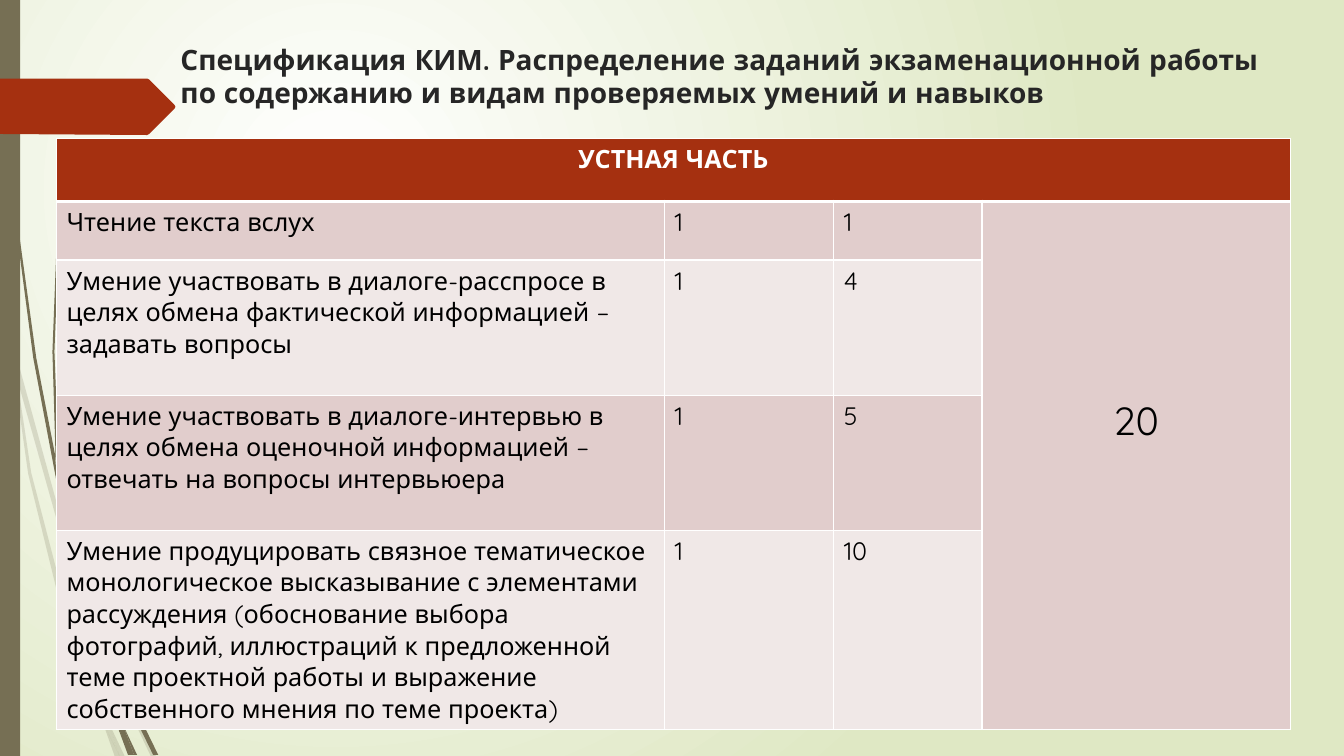
from lxml import etree
from pptx import Presentation
from pptx.dml.color import RGBColor
from pptx.enum import shapes, text
from pptx.oxml import parse_xml
from pptx.oxml.ns import qn
from pptx.util import Inches, Pt

FONT = "Quicksand"
COLORS = {
    "olive": "766F54", "rust": "A53010", "rose": "E1CDCC", "pale": "F0E8E7",
    "white": "FFFFFF", "black": "000000", "ink": "262626", "green": "DFE8C4",
}
TITLE = ("Спецификация КИМ. Распределение заданий экзаменационной работы "
         "по содержанию и видам проверяемых умений и навыков")
HEAD = "УСТНАЯ ЧАСТЬ"
TOTAL = "20"
ROWS = [
    ("Чтение текста вслух", "1", "1"),
    ("Умение участвовать в диалоге-расспросе в целях обмена фактической "
     "информацией – задавать вопросы", "1", "4"),
    ("Умение участвовать в диалоге-интервью в целях обмена оценочной "
     "информацией – отвечать на вопросы интервьюера", "1", "5"),
    ("Умение продуцировать связное тематическое монологическое высказывание "
     "с элементами рассуждения (обоснование выбора фотографий, иллюстраций "
     "к предложенной теме проектной работы и выражение собственного мнения "
     "по теме проекта)", "1", "10"),
]
WIDTHS = [6.03, 1.68, 1.47, 3.06]
HEIGHTS = [0.63, 0.58, 1.34, 1.34, 1.98]

# Grass blades as outlines in inches
FAINT = [
    [(0.58, 5.22), (0.84, 5.99), (0.85, 5.86), (0.62, 5.2), (0.14, 3.45),
     (0.17, 3.76)],
    [(0.92, 6.07), (0.88, 5.96), (0.88, 6.1), (1.23, 6.94), (1.5, 7.51),
     (1.55, 7.51), (1.27, 6.92)],
    [(1.19, 7.51), (1.24, 7.51), (1.05, 7.11)],
    [(0.93, 6.83), (0.7, 6.19), (0.31, 4.69), (0.17, 3.76), (0.11, 3.5),
     (0.28, 4.7), (0.65, 6.21), (0.92, 6.93), (1.01, 7.14), (0.99, 7.07)],
    [(1.01, 7.14), (1.14, 7.51), (1.19, 7.51)],
    [(0.96, 6.92), (0.93, 6.83), (0.99, 7.07), (1.01, 7.14), (1.19, 7.51),
     (1.05, 7.11)],
]
SOLID = [
    [(0.07, 1.1), (0.17, 2.33), (0.33, 3.55), (0.56, 4.77), (0.57, 4.81),
     (0.55, 4.57), (0.55, 4.53), (0.36, 3.55), (0.19, 2.32), (0.08, 1.09),
     (0.05, 0.48), (0.04, 0), (0.03, 0), (0.04, 0.48)],
    [(1.13, 6.49), (1.1, 6.41), (1.11, 6.56), (1.32, 7.08), (1.52, 7.49),
     (1.57, 7.49), (1.36, 7.06)],
    [(0.6, 4.72), (0.58, 4.53), (0.54, 3.49), (0.58, 2.45), (0.63, 1.93),
     (0.7, 1.41), (0.62, 1.93), (0.56, 2.45), (0.52, 3.49), (0.55, 4.49)],
    [(1.33, 7.49), (1.36, 7.49), (1.22, 7.19)],
    [(0.57, 4.77), (0.64, 5.05), (0.6, 4.72), (0.55, 4.49), (0.55, 4.53)],
    [(1.17, 7.22), (1.27, 7.49), (1.31, 7.49)],
    [(1.16, 7.06), (1.1, 6.91), (1.17, 7.22), (1.3, 7.49), (1.33, 7.49),
     (1.22, 7.19)],
]
ARROW = [(0, 0.78), (1.46, 0.78), (1.48, 0.79), (1.73, 1.04), (1.74, 1.06),
         (1.73, 1.08), (1.48, 1.33), (1.46, 1.34), (0, 1.33)]


def rgb(name):
    return RGBColor.from_string(COLORS[name])


def paint(shape, color, alpha=None):
    shape.shadow.inherit = False
    shape.fill.solid()
    shape.fill.fore_color.rgb = rgb(color)
    shape.line.fill.background()
    if alpha:
        tint = shape._element.spPr.find(".//" + qn("a:srgbClr"))
        etree.SubElement(tint, qn("a:alpha")).set("val", str(alpha * 1000))


def outline(slide, points, color, alpha=None):
    spots = [(Inches(x), Inches(y)) for x, y in points]
    pen = slide.shapes.build_freeform(*spots[0])
    pen.add_line_segments(spots[1:], close=True)
    paint(pen.convert_to_shape(), color, alpha)


def write(frame, words, size, color, bold=False, align=text.PP_ALIGN.LEFT):
    frame.text = words
    para = frame.paragraphs[0]
    para.alignment = align
    font = para.runs[0].font
    font.name, font.size, font.bold = FONT, Pt(size), bold
    font.color.rgb = rgb(color)


def dress(cell, color, base=1):
    """Give a cell white borders, its bottom one base points wide, and a fill."""
    props = cell._tc.get_or_add_tcPr()
    for side in ("lnL", "lnR", "lnT", "lnB"):
        line = etree.SubElement(props, qn("a:" + side))
        line.set("w", str(Pt(base if side == "lnB" else 1)))
        fill = etree.SubElement(line, qn("a:solidFill"))
        etree.SubElement(fill, qn("a:srgbClr")).set("val", COLORS["white"])
    cell.fill.solid()
    cell.fill.fore_color.rgb = rgb(color)


def backdrop(slide):
    """Set a round gradient behind the slide."""
    slide.background.fill.gradient()
    old = slide._element.find(".//" + qn("a:gradFill"))
    space = "http://schemas.openxmlformats.org/drawingml/2006/main"
    new = parse_xml(
        f'<a:gradFill xmlns:a="{space}" rotWithShape="1"><a:gsLst>'
        f'<a:gs pos="0"><a:srgbClr val="{COLORS["white"]}"/></a:gs>'
        f'<a:gs pos="100000"><a:srgbClr val="{COLORS["green"]}"/></a:gs>'
        '</a:gsLst><a:path path="circle"><a:fillToRect l="50000" t="50000" '
        'r="100000" b="100000"/></a:path></a:gradFill>')
    old.getparent().replace(old, new)


def heading(slide):
    title = slide.shapes.title
    title.left, title.top = Inches(1.69), Inches(0.37)
    title.width, title.height = Inches(10.89), Inches(0.83)
    frame = title.text_frame
    write(frame, TITLE, 20, "ink", True, text.PP_ALIGN.JUSTIFY)
    frame.word_wrap = True
    frame.auto_size = text.MSO_AUTO_SIZE.NONE
    frame.vertical_anchor = text.MSO_ANCHOR.TOP


def grid(slide):
    table = slide.shapes.add_table(
        len(HEIGHTS), len(WIDTHS), Inches(0.56), Inches(1.37),
        Inches(sum(WIDTHS)), Inches(sum(HEIGHTS))).table
    for col, width in zip(table.columns, WIDTHS):
        col.width = Inches(width)
    for row, height in zip(table.rows, HEIGHTS):
        row.height = Inches(height)
    last = len(WIDTHS) - 1
    for r in range(len(HEIGHTS)):
        for c in range(len(WIDTHS)):
            shade = "rust" if r == 0 else "rose" if r % 2 or c == last else "pale"
            dress(table.cell(r, c), shade, 1 if r else 3)
    head, total = table.cell(0, 0), table.cell(1, last)
    head.merge(table.cell(0, last))
    total.merge(table.cell(len(ROWS), last))
    write(head.text_frame, HEAD, 18, "white", True, text.PP_ALIGN.CENTER)
    write(total.text_frame, TOTAL, 28, "black", align=text.PP_ALIGN.CENTER)
    total.vertical_anchor = text.MSO_ANCHOR.MIDDLE
    total.margin_bottom = Inches(0.95)
    for r, row in enumerate(ROWS, 1):
        for c, words in enumerate(row):
            write(table.cell(r, c).text_frame, words, 18, "black")


def main():
    deck = Presentation()
    deck.slide_width, deck.slide_height = Inches(13.33), Inches(7.5)
    slide = deck.slides.add_slide(deck.slide_layouts[5])
    backdrop(slide)
    for blade in FAINT:
        outline(slide, blade, "olive", 20)
    for blade in SOLID:
        outline(slide, blade, "olive")
    bar = slide.shapes.add_shape(shapes.MSO_SHAPE.RECTANGLE, 0, 0,
                                 Inches(0.2), deck.slide_height)
    paint(bar, "olive")
    outline(slide, ARROW, "rust")
    heading(slide)
    grid(slide)
    deck.save("out.pptx")


if __name__ == "__main__":
    main()
